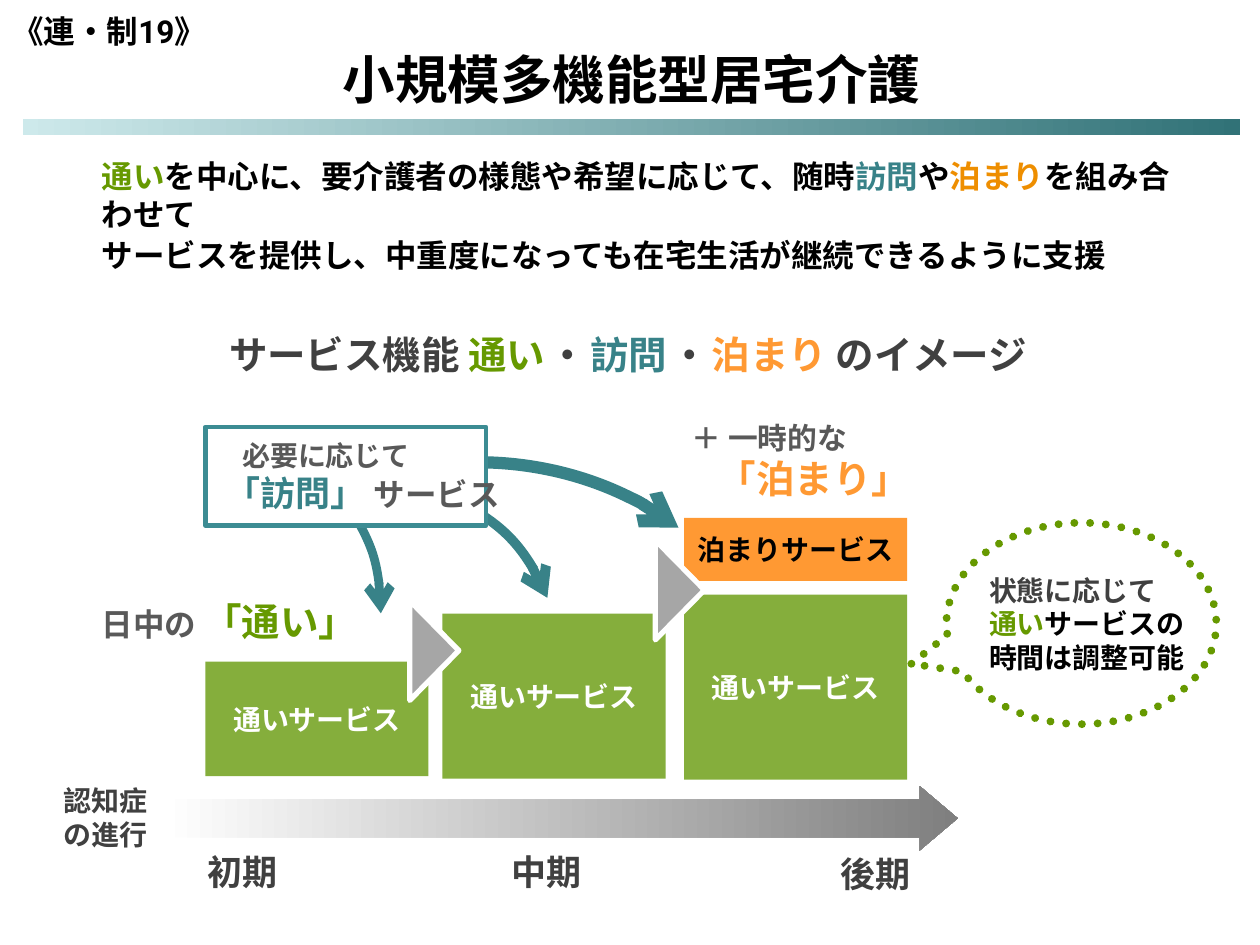
from dataclasses import dataclass

from lxml import etree
from pptx import Presentation
from pptx.dml import color
from pptx.enum import dml, shapes, text
from pptx.oxml import ns
from pptx.util import Cm, Pt

GOTHIC = "Noto Sans CJK JP"
BLACK, WHITE, DARK, GREY = "000000", "FFFFFF", "404040", "595959"
GREEN, TEAL, ORANGE = "669900", "388288", "FF9933"
KIND = shapes.MSO_SHAPE
MIDDLE = text.MSO_ANCHOR.MIDDLE
CENTER = text.PP_ALIGN.CENTER


@dataclass
class Box:
    left: float
    top: float
    width: float
    height: float

    def inner(self, x, y, width, height):
        return Box(self.left + x, self.top + y, width, height)

    def lengths(self):
        return [Cm(v) for v in (self.left, self.top, self.width, self.height)]


def rgb(value):
    return color.RGBColor.from_string(value)


def write(frame, paragraphs, anchor=text.MSO_ANCHOR.TOP, align=None, wrap=True,
          grow=False, spacing=(), before=None, indents=()):
    frame.word_wrap = wrap
    frame.vertical_anchor = anchor
    frame.auto_size = (text.MSO_AUTO_SIZE.SHAPE_TO_FIT_TEXT if grow
                       else text.MSO_AUTO_SIZE.NONE)
    for index, runs in enumerate(paragraphs):
        paragraph = frame.add_paragraph() if index else frame.paragraphs[0]
        paragraph.alignment = align or text.PP_ALIGN.LEFT
        if index < len(spacing):
            paragraph.line_spacing = Pt(spacing[index])
        if before:
            paragraph.space_before = Pt(before)
        if index < len(indents):
            paragraph._p.get_or_add_pPr().set("marL", str(Cm(indents[index])))
        for words, size, shade, *font in runs:
            run = paragraph.add_run()
            run.text = words
            run.font.size = Pt(size)
            run.font.bold = True
            run.font.color.rgb = rgb(shade)
            run.font.name = font[0] if font else GOTHIC
            east = etree.SubElement(run.font._element, ns.qn("a:ea"))
            east.set("typeface", GOTHIC)


def label(slide, box, paragraphs, **options):
    area = slide.shapes.add_textbox(*box.lengths())
    write(area.text_frame, paragraphs, **options)


def draw(slide, kind, box, fill=None, line=None, weight=1, adjust=(), turn=0):
    shape = slide.shapes.add_shape(kind, *box.lengths())
    shape.shadow.inherit = False
    shape.rotation = turn
    for index, value in enumerate(adjust):
        shape.adjustments[index] = value
    if fill:
        shape.fill.solid()
        shape.fill.fore_color.rgb = rgb(fill)
    else:
        shape.fill.background()
    if line:
        shape.line.color.rgb = rgb(line)
        shape.line.width = Pt(weight)
    else:
        shape.line.fill.background()
    return shape


def shade(shape, start, end, angle):
    shape.fill.gradient()
    shape.fill.gradient_angle = angle
    for stop, value in zip(shape.fill.gradient_stops, (start, end)):
        stop.color.rgb = rgb(value)


def outline(shape):
    return shape._element.spPr.find(ns.qn("a:ln"))


def header(slide, box):
    label(slide, box.inner(3.66, 0.94, 18.14, 1.27),
          [[("小規模多機能型居宅介護", 30, BLACK)]], anchor=MIDDLE, align=CENTER)
    band = draw(slide, KIND.RECTANGLE, box.inner(0.46, 2.39, 24.54, 0.33))
    shade(band, "CDE9EB", "317277", 0)
    label(slide, box.inner(0, 0, 3.56, 1.24),
          [[("《連・制", 18, BLACK), ("19", 18, BLACK, "Roboto"), ("》", 18, BLACK)]],
          anchor=MIDDLE, wrap=False, spacing=[22])


def summary(slide, box):
    label(slide, box, [
        [("通い", 18, GREEN),
         ("を中心に、要介護者の様態や希望に応じて、随時", 18, BLACK),
         ("訪問", 18, TEAL), ("や", 18, BLACK), ("泊まり", 18, "EE8E00"),
         ("を組み合わせて", 18, BLACK)],
        [("サービスを提供し、中重度になっても在宅生活が継続できるように支援", 18, BLACK)],
    ], anchor=text.MSO_ANCHOR.BOTTOM, grow=True, before=1.8)


def heading(slide, box):
    gap, dot = (" ", 8, DARK), ("・", 22, DARK)
    label(slide, box, [[
        ("サービス機能 ", 22, DARK), ("通い", 22, GREEN), gap, dot, gap,
        ("訪問", 22, TEAL), gap, dot, gap,
        ("泊まり", 22, ORANGE), (" のイメージ", 22, DARK)]])


def service_block(slide, box, words, fill, ink):
    block = draw(slide, KIND.RECTANGLE, box, fill)
    write(block.text_frame, [[(words, 16, ink)]],
          anchor=MIDDLE, align=CENTER, wrap=False)


def visit_arrow(slide, box, weight, angles):
    arc = draw(slide, KIND.ARC, box, line=TEAL, weight=weight, adjust=angles)
    etree.SubElement(outline(arc), ns.qn("a:tailEnd")).set("type", "arrow")


def service_stages(slide, box):
    service_block(slide, box.inner(11.99, 2.11, 4.5, 1.27), "泊まりサービス", ORANGE, BLACK)
    for x, y, height in ((2.34, 5.01, 2.31), (7.12, 4.04, 3.33), (11.99, 3.66, 3.73)):
        service_block(slide, box.inner(x, y, 4.5, height), "通いサービス", "85AE3C", WHITE)
    for x, y in ((5.95, 4.29), (10.9, 3.07)):
        draw(slide, KIND.ISOSCELES_TRIANGLE, box.inner(x, y, 2.01, 0.99),
             "A6A6A6", WHITE, 3, turn=90)
    label(slide, box.inner(0, 3.61, 6.07, 1.19),
          [[("日中の ", 18, GREY), ("「通い」", 22, GREEN)]], grow=True)
    label(slide, box.inner(11.89, 0, 6.5, 1.93),
          [[("＋ 一時的な", 17, GREY)], [("「泊まり」", 22, ORANGE)]],
          grow=True, indents=[0, 0.53])
    visit_arrow(slide, box.inner(1.81, 0.99, 12.01, 10.01), 7, (161.26, 190.68))
    visit_arrow(slide, box.inner(-1.16, 0.38, 7.04, 7.14), 5, (183.44, 0.82))
    visit_arrow(slide, box.inner(3.33, 1.6, 6.17, 7.14), 5.5, (171.13, 199.7))
    visit = draw(slide, KIND.RECTANGLE, box.inner(2.34, 0.28, 5.66, 1.98),
                 WHITE, "3C8C93", 2.75)
    write(visit.text_frame,
          [[("　", 14, GREY), ("必要に応じて", 16, GREY)],
           [(" 「訪問」 ", 20, TEAL), ("サービス", 18, GREY)]],
          anchor=MIDDLE, wrap=False, spacing=[19.2])


def timeline(slide, box):
    arrow = draw(slide, KIND.DOWN_ARROW, box.inner(9.6, -7.19, 1.3, 16.03),
                 adjust=(0.59, 0.59), turn=270)
    shade(arrow, WHITE, "7F7F7F", 270)
    label(slide, box.inner(0, 0, 3.05, 2.06),
          [[("認知症", 16, DARK)], [("の進行", 16, DARK)]])
    for period, x, y in (("初期", 2.9, 1.35), ("中期", 9.02, 1.35), ("後期", 15.65, 1.4)):
        label(slide, box.inner(x, y, 2.39, 1.09), [[(period, 20, DARK)]], grow=True)


def hours_callout(slide, box):
    balloon = draw(slide, KIND.OVAL_CALLOUT, box, line=GREEN, weight=4.5,
                   adjust=(-0.63, 0.2))
    balloon.line.dash_style = dml.MSO_LINE.ROUND_DOT
    outline(balloon).set("cap", "rnd")
    label(slide, box.inner(0.61, 0.89, 4.85, 2.54),
          [[("状態に応じて", 16, DARK)],
           [("通い", 16, GREEN), ("サービスの", 16, BLACK)],
           [("時間は調整可能", 16, BLACK)]])


def main():
    deck = Presentation()
    deck.slide_width, deck.slide_height = Cm(25.4), Cm(19.05)
    slide = deck.slides.add_slide(deck.slide_layouts[6])
    header(slide, Box(0, 0, 25.4, 2.72))
    summary(slide, Box(1.8, 3.76, 22.33, 1.88))
    heading(slide, Box(4.37, 6.55, 17.02, 1.42))
    service_stages(slide, Box(1.8, 8.33, 16.49, 7.39))
    timeline(slide, Box(1.04, 15.67, 18.27, 2.49))
    hours_callout(slide, Box(19.08, 10.54, 5.44, 4.06))
    deck.save("out.pptx")


if __name__ == "__main__":
    main()
